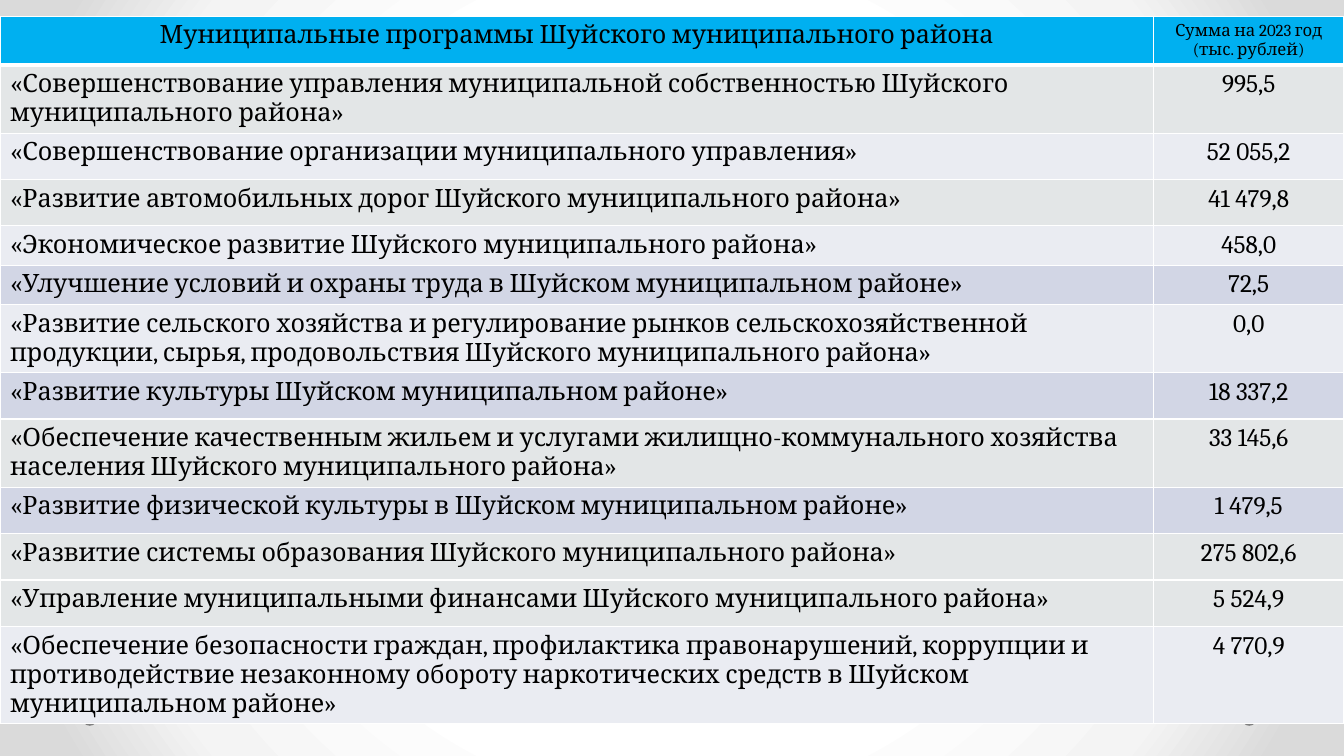
import dataclasses

import pptx
import pptx.dml.color
import pptx.enum.shapes
import pptx.enum.text
import pptx.oxml
import pptx.oxml.ns
import pptx.util

Inches = pptx.util.Inches
Pt = pptx.util.Pt
ALIGN = pptx.enum.text.PP_ALIGN
NAMESPACE = pptx.oxml.ns.nsdecls("a")

COLORS = {
    "text": "000000",
    "border": "FFFFFF",
    "header": "00B0F0",
    "gray": "E3E6E7",
    "light": "EAECF2",
    "blue": "D2D6E5",
    "dot": "808080",
}
BACKGROUND_STOPS = {50: "FFFFFF", 76: "F4F4F4", 92: "DADADA"}
FONT = "Cambria"
COLUMN_WIDTHS = (11.44, 1.89)
DOT_LEFTS = (12.33, 0.83)


@dataclasses.dataclass(frozen=True)
class Program:
    name: str
    amount: str
    fill: str
    height: float = 0.46
    amount_size: int = 18


PROGRAMS = (
    Program("Муниципальные программы Шуйского муниципального района",
            "Сумма на 2023 год (тыс. рублей)", "header", 0.23, 12),
    Program("«Совершенствование управления муниципальной собственностью Шуйского "
            "муниципального района»", "995,5", "gray", 0.52),
    Program("«Совершенствование организации муниципального управления»", "52 055,2", "light"),
    Program("«Развитие автомобильных дорог Шуйского муниципального района»", "41 479,8", "gray"),
    Program("«Экономическое развитие Шуйского муниципального района»", "458,0", "light", 0.23),
    Program("«Улучшение условий и охраны труда в Шуйском муниципальном районе»",
            "72,5", "blue", 0.35),
    Program("«Развитие сельского хозяйства и регулирование рынков сельскохозяйственной "
            "продукции, сырья, продовольствия Шуйского муниципального района»",
            "0,0", "light", 0.35),
    Program("«Развитие культуры Шуйском муниципальном районе»", "18 337,2", "blue"),
    Program("«Обеспечение качественным жильем и услугами жилищно-коммунального хозяйства "
            "населения Шуйского муниципального района»", "33 145,6", "gray"),
    Program("«Развитие физической культуры в Шуйском муниципальном районе»", "1 479,5", "blue"),
    Program("«Развитие системы образования Шуйского муниципального района»",
            "275 802,6", "gray"),
    Program("«Управление муниципальными финансами Шуйского муниципального района»",
            "5 524,9", "gray"),
    Program("«Обеспечение безопасности граждан, профилактика правонарушений, коррупции и "
            "противодействие незаконному обороту наркотических средств в Шуйском "
            "муниципальном районе»", "4 770,9", "light"),
)


def color(name: str) -> pptx.dml.color.RGBColor:
    return pptx.dml.color.RGBColor.from_string(COLORS[name])


def line_element(tag: str, width: float, name: str):
    return pptx.oxml.parse_xml(
        f'<a:{tag} {NAMESPACE} w="{Pt(width)}"><a:solidFill>'
        f'<a:srgbClr val="{COLORS[name]}"/></a:solidFill></a:{tag}>'
    )


def paint_background(slide: pptx.slide.Slide) -> None:
    slide.background.fill.gradient()
    gradient = slide.element.find(".//" + pptx.oxml.ns.qn("a:gradFill"))
    stops = "".join(
        f'<a:gs pos="{position * 1000}"><a:srgbClr val="{value}"/></a:gs>'
        for position, value in BACKGROUND_STOPS.items()
    )
    radial = pptx.oxml.parse_xml(
        f'<a:gradFill {NAMESPACE} rotWithShape="1"><a:gsLst>{stops}</a:gsLst>'
        '<a:path path="circle"><a:fillToRect l="50000" t="50000" r="50000" b="50000"/>'
        "</a:path></a:gradFill>"
    )
    gradient.getparent().replace(gradient, radial)


def add_dot(slide: pptx.slide.Slide, left: float) -> None:
    dot = slide.shapes.add_shape(
        pptx.enum.shapes.MSO_SHAPE.OVAL,
        Inches(left), Inches(7.11), Inches(0.12), Inches(0.09),
    )
    dot.shadow.inherit = False
    dot.fill.solid()
    dot.fill.fore_color.rgb = color("dot")
    dot.line.fill.background()


def fill_cell(cell, text: str, size: int, fill: str, alignment: ALIGN) -> None:
    paragraph = cell.text_frame.paragraphs[0]
    paragraph.alignment = alignment
    run = paragraph.add_run()
    run.text = text
    run.font.name = FONT
    run.font.size = Pt(size)
    run.font.bold = False
    run.font.color.rgb = color("text")
    run.font._element.insert(0, line_element("ln", 0.75, "text"))
    cell.fill.solid()
    cell.fill.fore_color.rgb = color(fill)
    bottom = 3 if fill == "header" else 1
    borders = {"lnL": 1, "lnR": 1, "lnT": 1, "lnB": bottom}
    properties = cell._tc.get_or_add_tcPr()
    for index, (tag, width) in enumerate(borders.items()):
        properties.insert(index, line_element(tag, width, "border"))


def add_program_table(slide: pptx.slide.Slide) -> None:
    frame = slide.shapes.add_table(
        len(PROGRAMS), len(COLUMN_WIDTHS),
        Inches(0), Inches(0.16), Inches(13.33), Inches(7.14),
    )
    table = frame.table
    for column, width in zip(table.columns, COLUMN_WIDTHS):
        column.width = Inches(width)
    for row, program in zip(table.rows, PROGRAMS):
        row.height = Inches(program.height)
        name_alignment = ALIGN.CENTER if program.fill == "header" else ALIGN.LEFT
        fill_cell(row.cells[0], program.name, 18, program.fill, name_alignment)
        fill_cell(row.cells[1], program.amount, program.amount_size, program.fill, ALIGN.CENTER)
    frame.height = Inches(7.14)


def main() -> None:
    presentation = pptx.Presentation()
    presentation.slide_width = Inches(13.33)
    presentation.slide_height = Inches(7.5)
    slide = presentation.slides.add_slide(presentation.slide_layouts[6])
    paint_background(slide)
    for left in DOT_LEFTS:
        add_dot(slide, left)
    add_program_table(slide)
    presentation.save("out.pptx")


if __name__ == "__main__":
    main()
